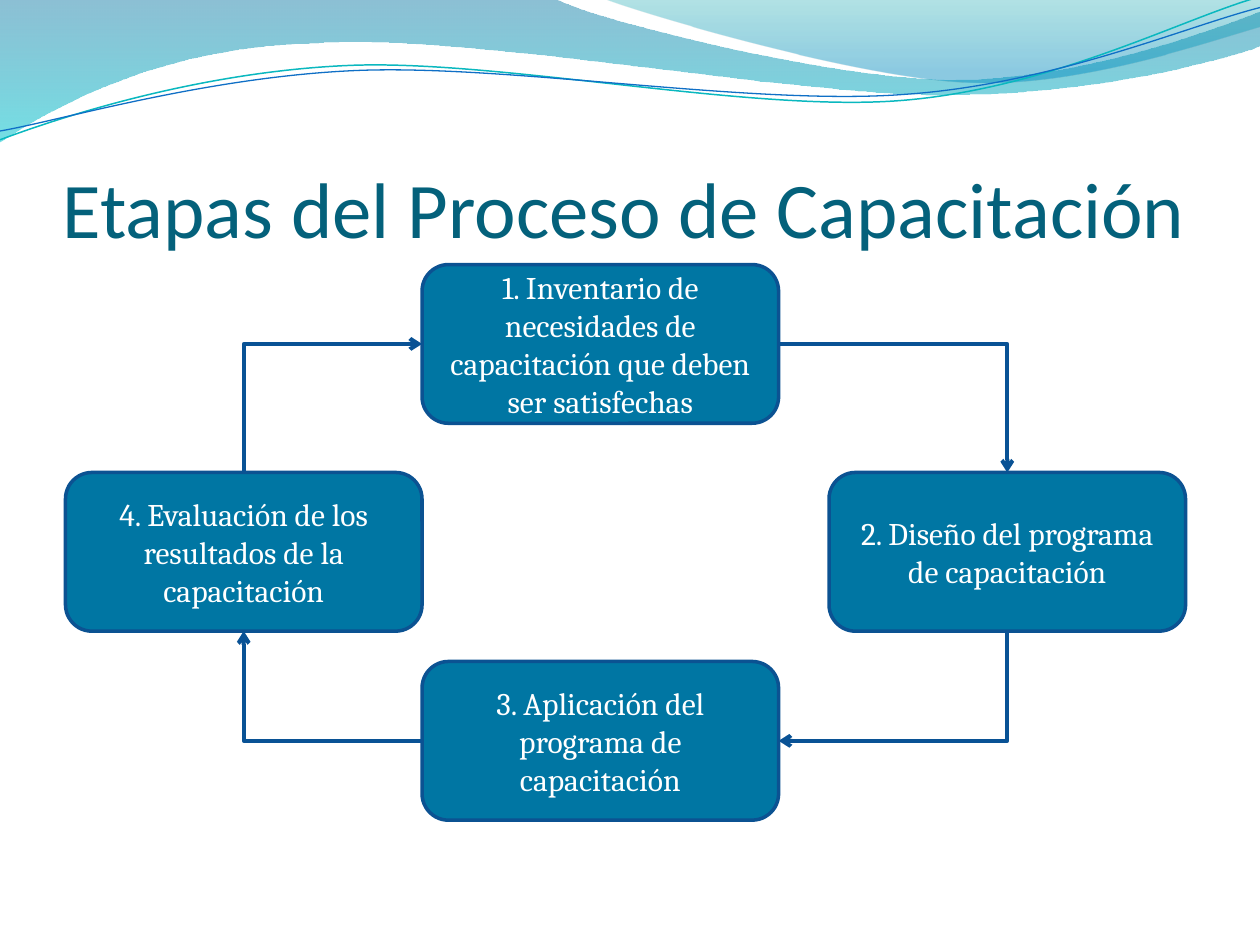
from dataclasses import dataclass

from lxml.etree import SubElement
from pptx import Presentation
from pptx.dml.color import RGBColor
from pptx.enum.shapes import MSO_CONNECTOR, MSO_SHAPE
from pptx.enum.text import MSO_ANCHOR as Anchor, PP_ALIGN as Align
from pptx.oxml.ns import qn
from pptx.util import Inches, Pt


@dataclass(frozen=True)
class Theme:
    title_color: str = "04617B"
    title_font: str = "Calibri"
    title_size: float = 45
    stage_fill: str = "0076A3"
    stage_line: str = "0B5292"
    stage_line_width: float = 2
    stage_text: str = "FFFFFF"
    stage_font: str = "Cambria"
    stage_size: float = 18
    arrow_color: str = "095295"
    arrow_width: float = 2.25


THEME = Theme()
COLUMNS = (0.52, 3.35, 6.58)
ROWS = (2.1, 3.75, 5.25)
STAGE_WIDTH, STAGE_HEIGHT = 2.83, 1.26

# Stage text with its column and row
STAGES = (
    ("1. Inventario de necesidades de capacitación que deben ser satisfechas", 1, 0),
    ("2. Diseño del programa de capacitación", 2, 1),
    ("3. Aplicación del programa de capacitación", 1, 2),
    ("4. Evaluación de los resultados de la capacitación", 0, 1),
)

# Each step is a line (x, y) or a Bézier curve (two controls, end), in inches.
# Gradient stops are position, colour, opacity in percent.
BANDS = (
    (((0, 0), (4.4, -0.01),
      (4.76, 0.17, 6.64, 0.63, 7.58, 0.63), (8.53, 0.63, 9.58, 0.26, 10, 0.09),
      (10.01, 0.36),
      (9.83, 0.44, 8.7, 0.76, 7.46, 0.75), (6.22, 0.75, 3.82, 0.28, 2.57, 0.34),
      (1.29, 0.36, 0.46, 0.83, -0.01, 1.13)),
     ((0, "0074A1", 45), (1, "00C6CF", 55))),
    (((4.79, -0.01),
      (5.09, 0.11, 6.82, 0.62, 7.69, 0.65), (8.56, 0.69, 9.61, 0.32, 10, 0.21),
      (10, 0)),
     ((0, "00A1A9", 30), (0.8, "008BBF", 45))),
)
WAVES = (
    (((0, 1.11),
      (0.48, 0.93, 1.58, 0.57, 2.77, 0.52), (3.95, 0.47, 5.93, 0.89, 7.13, 0.8),
      (8.33, 0.71, 9.38, 0.15, 9.98, -0.02)), "0AB8BF", 0.85),
    (((0, 1.04),
      (0.47, 0.96, 1.64, 0.61, 2.83, 0.56), (4.03, 0.51, 5.97, 0.84, 7.17, 0.75),
      (8.36, 0.67, 9.41, 0.21, 10, 0.06)), "0F6FC6", 0.75),
)


def apply_format(target, values):
    for name, value in values.items():
        setattr(target, name, value)


def set_line(line, color, width):
    line.color.rgb = RGBColor.from_string(color)
    line.width = Pt(width)


def bend_lines(outline, steps):
    """Join the three lines of each curve step into one Bézier segment."""
    lines = iter(list(outline.element.spPr.iter(qn("a:lnTo"))))
    for step in steps[1:]:
        segment = next(lines)
        if len(step) == 2:
            continue
        segment.tag = qn("a:cubicBezTo")
        for line in (next(lines), next(lines)):
            segment.append(line[0])
            line.getparent().remove(line)


def add_outline(page, steps, close):
    points = [(Inches(x), Inches(y))
              for step in steps for x, y in zip(step[::2], step[1::2])]
    builder = page.shapes.build_freeform(*points[0])
    builder.add_line_segments(points[1:], close=close)
    outline = builder.convert_to_shape()
    outline.shadow.inherit = False
    bend_lines(outline, steps)
    return outline


def add_band(page, steps, stops):
    band = add_outline(page, steps, close=True)
    band.line.fill.background()
    band.fill.gradient()
    band.fill.gradient_angle = 270
    for stop, (position, color, _) in zip(band.fill.gradient_stops, stops):
        stop.position = position
        stop.color.rgb = RGBColor.from_string(color)
    for node, (_, _, opacity) in zip(band.element.spPr.iter(qn("a:srgbClr")), stops):
        SubElement(node, qn("a:alpha"), val=str(opacity * 1000))


def add_wave(page, steps, color, width):
    wave = add_outline(page, steps, close=False)
    wave.fill.background()
    set_line(wave.line, color, width)


def write_text(box, text, font, size, color, align, frame_format):
    frame = box.text_frame
    apply_format(frame, {"word_wrap": True, **frame_format})
    para = frame.paragraphs[0]
    para.alignment = align
    span = para.add_run()
    span.text = text
    apply_format(span.font, {"name": font, "size": Pt(size)})
    span.font.color.rgb = RGBColor.from_string(color)


def add_title(page, text):
    box = page.shapes.add_textbox(Inches(0.5), Inches(0.77), Inches(9), Inches(1.25))
    write_text(box, text, THEME.title_font, THEME.title_size, THEME.title_color, Align.LEFT,
               {"vertical_anchor": Anchor.BOTTOM, "margin_left": 0, "margin_right": 0,
                "margin_top": Inches(0.05), "margin_bottom": 0})


def add_stage(page, text, column, row):
    box = page.shapes.add_shape(
        MSO_SHAPE.ROUNDED_RECTANGLE, Inches(COLUMNS[column]), Inches(ROWS[row]),
        Inches(STAGE_WIDTH), Inches(STAGE_HEIGHT))
    box.shadow.inherit = False
    box.fill.solid()
    box.fill.fore_color.rgb = RGBColor.from_string(THEME.stage_fill)
    set_line(box.line, THEME.stage_line, THEME.stage_line_width)
    write_text(box, text, THEME.stage_font, THEME.stage_size, THEME.stage_text, Align.CENTER,
               {"vertical_anchor": Anchor.MIDDLE})
    return box


def side_point(box, toward, horizontal):
    """Middle of the side of box that faces the box toward."""
    x, y = box.left + box.width // 2, box.top + box.height // 2
    if horizontal:
        return (box.left + box.width if toward.left > box.left else box.left), y
    return x, (box.top + box.height if toward.top > box.top else box.top)


def add_bent_arrow(page, source, target, horizontal_first):
    """Join two boxes with one right-angle bend."""
    begin = side_point(source, target, horizontal_first)
    end = side_point(target, source, not horizontal_first)
    if not horizontal_first:
        # The preset runs sideways first, so lay it out for a quarter turn.
        (x1, y1), (x2, y2) = begin, end
        middle_x, middle_y = (x1 + x2) // 2, (y1 + y2) // 2
        half_x, half_y = (y2 - y1) // 2, (x1 - x2) // 2
        begin = middle_x - half_x, middle_y - half_y
        end = middle_x + half_x, middle_y + half_y
    arrow = page.shapes.add_connector(MSO_CONNECTOR.ELBOW, *begin, *end)
    set_line(arrow.line, THEME.arrow_color, THEME.arrow_width)
    properties = arrow.element.spPr
    properties.find(qn("a:prstGeom")).set("prst", "bentConnector2")
    if not horizontal_first:
        properties.find(qn("a:xfrm")).set("rot", str(90 * 60000))
    SubElement(properties.find(qn("a:ln")), qn("a:tailEnd"), type="arrow")
    SubElement(properties, qn("a:effectLst"))


def main():
    deck = Presentation()
    apply_format(deck, {"slide_width": Inches(10), "slide_height": Inches(7.5)})
    page = deck.slides.add_slide(deck.slide_layouts[6])
    for band in BANDS:
        add_band(page, *band)
    for wave in WAVES:
        add_wave(page, *wave)
    add_title(page, "Etapas del Proceso de Capacitación")
    boxes = [add_stage(page, *stage) for stage in STAGES]
    for index, box in enumerate(boxes):
        add_bent_arrow(page, box, boxes[(index + 1) % len(boxes)], index % 2 == 0)
    deck.save("out.pptx")


if __name__ == "__main__":
    main()
